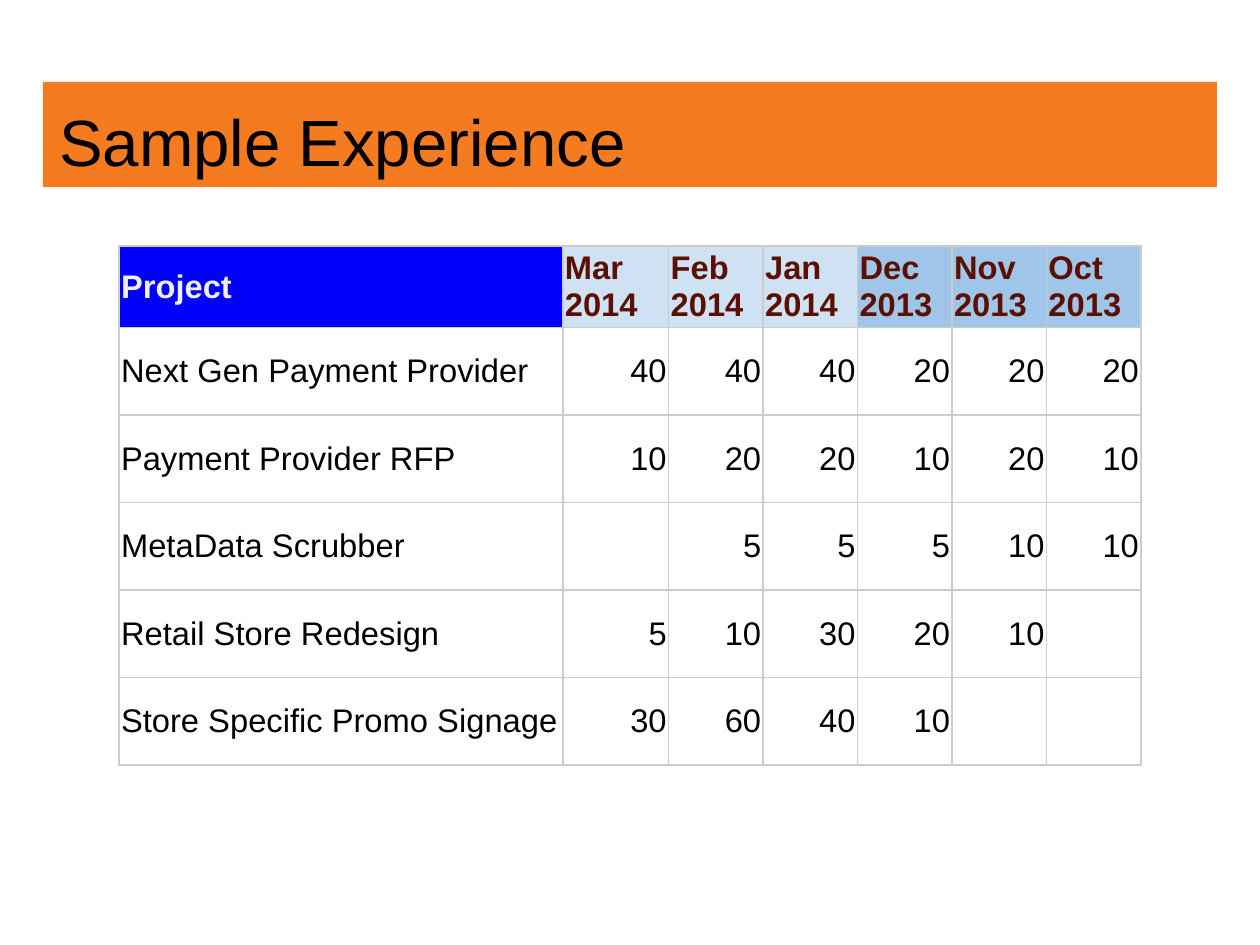
from lxml import etree
from pptx import Presentation
from pptx.dml.color import RGBColor
from pptx.enum.shapes import MSO_SHAPE
from pptx.enum.text import MSO_ANCHOR, PP_ALIGN
from pptx.oxml.ns import qn
from pptx.util import Cm, Pt

RECTANGLE = MSO_SHAPE.RECTANGLE
MIDDLE, BOTTOM = MSO_ANCHOR.MIDDLE, MSO_ANCHOR.BOTTOM
LEFT, RIGHT = PP_ALIGN.LEFT, PP_ALIGN.RIGHT

ORANGE = RGBColor(0xF4, 0x7B, 0x20)
BLACK = RGBColor(0x00, 0x00, 0x00)
BLUE = RGBColor(0x00, 0x00, 0xFF)
OFF_WHITE = RGBColor(0xEF, 0xEF, 0xEF)
MAROON = RGBColor(0x5B, 0x0F, 0x00)
PALE_BLUE = RGBColor(0xCF, 0xE2, 0xF3)
SKY_BLUE = RGBColor(0x9F, 0xC5, 0xE8)
GRID_GREY = RGBColor(0xCC, 0xCC, 0xCC)

YEAR_FILLS = {"2014": PALE_BLUE, "2013": SKY_BLUE}
MONTHS = [("Mar", "2014"), ("Feb", "2014"), ("Jan", "2014"),
          ("Dec", "2013"), ("Nov", "2013"), ("Oct", "2013")]
PROJECTS = [
    ("Next Gen Payment Provider", [40, 40, 40, 20, 20, 20]),
    ("Payment Provider RFP", [10, 20, 20, 10, 20, 10]),
    ("MetaData Scrubber", [None, 5, 5, 5, 10, 10]),
    ("Retail Store Redesign", [5, 10, 30, 20, 10, None]),
    ("Store Specific Promo Signage", [30, 60, 40, 10, None, None]),
]


def add_run(paragraph, text, size, color, bold=False):
    run = paragraph.add_run()
    run.text = text
    run.font.name = "Arial"
    run.font.size = Pt(size)
    run.font.bold = bold
    run.font.color.rgb = color


def add_title_band(slide, left, top, width, height):
    band = slide.shapes.add_shape(RECTANGLE, left, top, width, height)
    band.shadow.inherit = False
    band.fill.solid()
    band.fill.fore_color.rgb = ORANGE
    band.line.fill.background()
    frame = band.text_frame
    frame.word_wrap = True
    frame.vertical_anchor = BOTTOM
    frame.margin_left = frame.margin_right = Cm(0.25)
    frame.margin_top = frame.margin_bottom = Cm(0.12)
    title = frame.paragraphs[0]
    title.alignment = LEFT
    add_run(title, "Sample Experience", 28, BLACK)


def add_borders(cell):
    properties = cell._tc.get_or_add_tcPr()
    for position, side in enumerate(("a:lnL", "a:lnR", "a:lnT", "a:lnB")):
        border = etree.Element(qn(side), w=str(Pt(0.75)))
        fill = etree.SubElement(border, qn("a:solidFill"))
        etree.SubElement(fill, qn("a:srgbClr"), val=str(GRID_GREY))
        properties.insert(position, border)


def fill_cell(cell, lines, color, fill=None, bold=False, alignment=LEFT):
    cell.vertical_anchor = MIDDLE
    cell.margin_left = cell.margin_right = Cm(0.03)
    cell.margin_top = cell.margin_bottom = Cm(0.03)
    if fill is None:
        cell.fill.background()
    else:
        cell.fill.solid()
        cell.fill.fore_color.rgb = fill
    add_borders(cell)
    paragraph = cell.text_frame.paragraphs[0]
    paragraph.alignment = alignment
    for index, line in enumerate(lines):
        if index:
            paragraph.add_line_break()
        add_run(paragraph, line, 14, color, bold)


def add_hours_table(slide, left, top, width, height):
    frame = slide.shapes.add_table(len(PROJECTS) + 1, len(MONTHS) + 1,
                                   left, top, width, height)
    table = frame.table
    table.first_row = table.horz_banding = False

    project_width, first_month_width = Cm(6.71), Cm(1.6)
    later_months = len(MONTHS) - 1
    month_width = (width - project_width - first_month_width) // later_months
    column_widths = [project_width, first_month_width] + [month_width] * later_months
    for column, column_width in zip(table.columns, column_widths):
        column.width = column_width

    header_height = Cm(1.23)
    project_height = (height - header_height) // len(PROJECTS)
    for row, row_height in zip(table.rows, [header_height] + [project_height] * len(PROJECTS)):
        row.height = row_height

    fill_cell(table.cell(0, 0), ["Project"], OFF_WHITE, BLUE, bold=True)
    for column, (month, year) in enumerate(MONTHS, 1):
        fill_cell(table.cell(0, column), [month, year], MAROON, YEAR_FILLS[year], bold=True)
    for row, (project, hours) in enumerate(PROJECTS, 1):
        fill_cell(table.cell(row, 0), [project], BLACK)
        for column, value in enumerate(hours, 1):
            lines = [] if value is None else [str(value)]
            fill_cell(table.cell(row, column), lines, BLACK, alignment=RIGHT)


def main():
    presentation = Presentation()
    presentation.slide_width = Cm(19.05)
    presentation.slide_height = Cm(14.29)
    slide = presentation.slides.add_slide(presentation.slide_layouts[6])
    add_title_band(slide, Cm(0.65), Cm(1.24), Cm(17.75), Cm(1.59))
    add_hours_table(slide, Cm(1.8), Cm(3.72), Cm(15.45), Cm(7.85))
    presentation.save("out.pptx")


if __name__ == "__main__":
    main()
